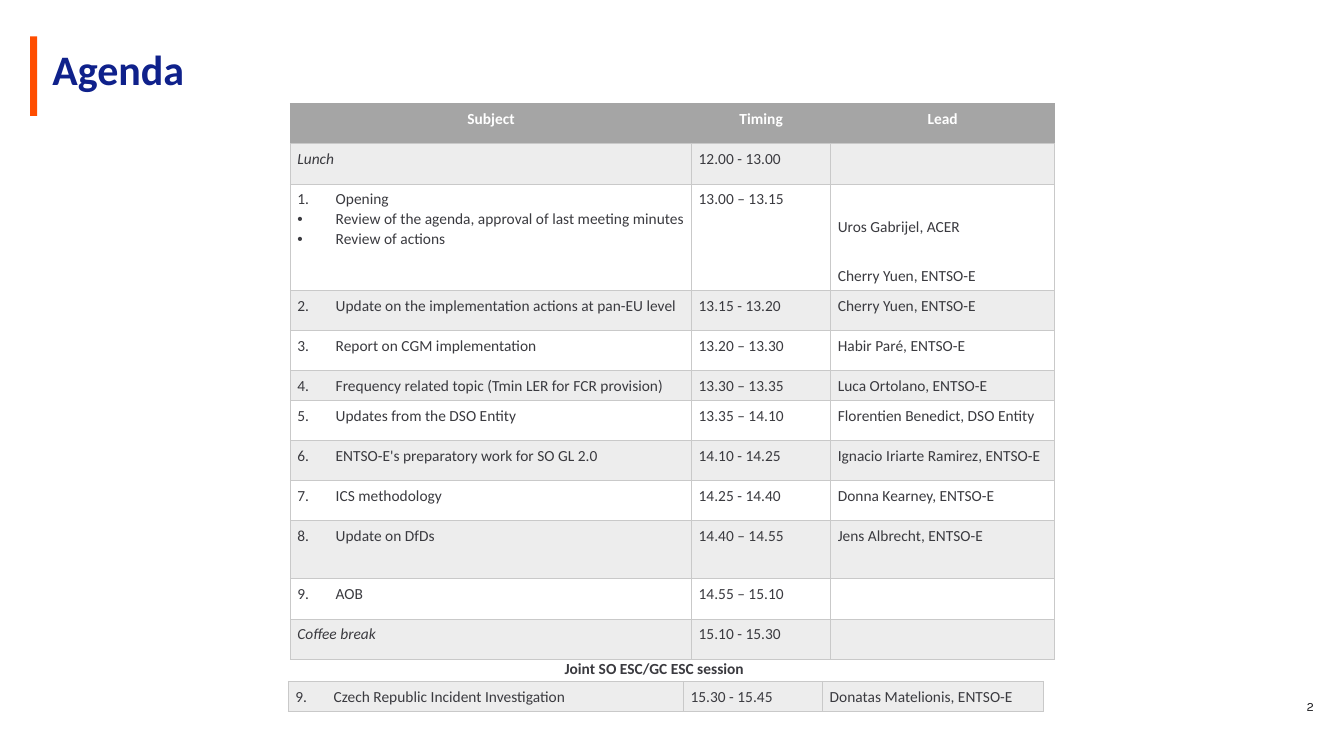
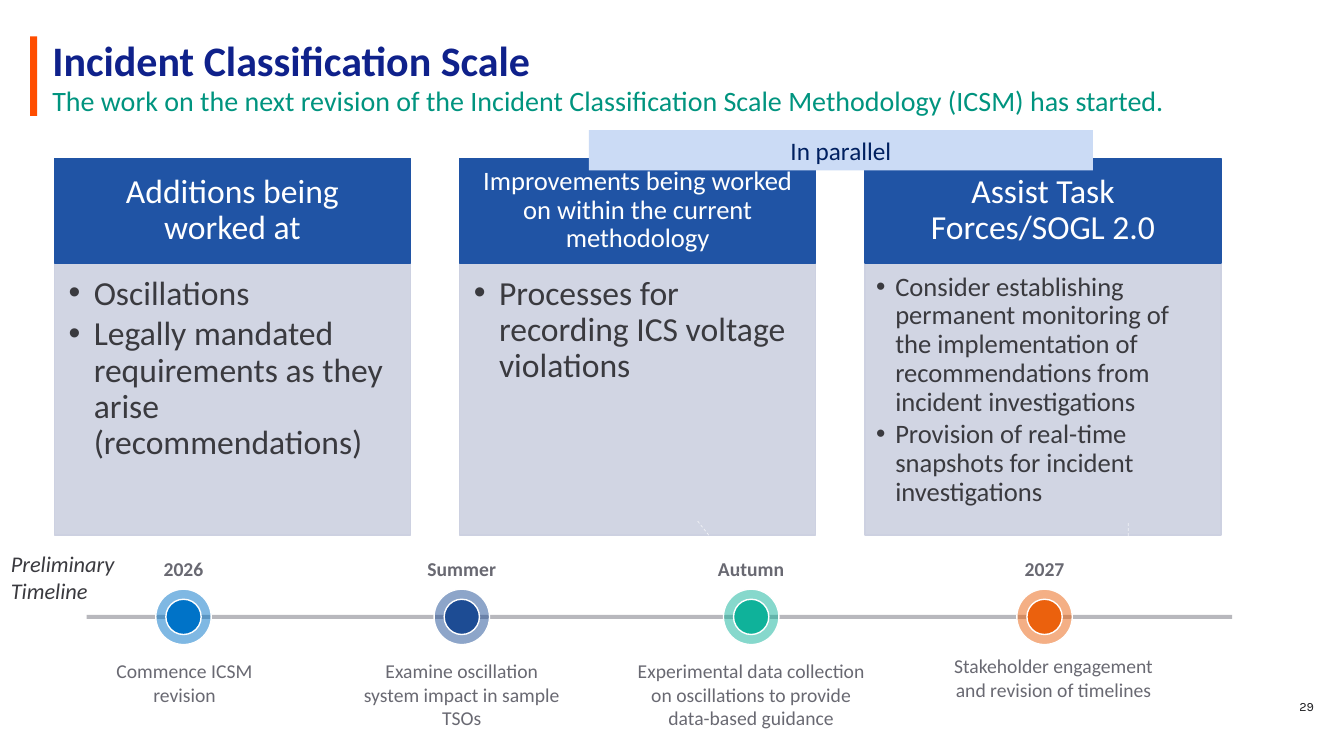
from lxml.etree import SubElement
from pptx import Presentation
from pptx.dml.color import RGBColor
from pptx.enum.dml import MSO_LINE
from pptx.enum.shapes import MSO_CONNECTOR, MSO_SHAPE
from pptx.enum.text import MSO_ANCHOR, MSO_AUTO_SIZE, PP_ALIGN
from pptx.oxml.ns import qn
from pptx.util import Inches, Pt

WIDE, HIGH = 13.33, 7.5
HUES = {
    "white": "FFFFFF", "navy": "0F218B", "orange": "FF4D00", "teal": "00947F",
    "text": "3A3A3F", "dark": "1D1D20", "gray": "696972", "head": "A5A5A5",
    "band": "EDEDED", "edge": "C9C9C9", "card": "2054A5", "pale": "CDD1E1",
    "axis": "9A9AA2", "tag": "CBDBF5", "ink": "002060",
    "blue": "0073C8", "deep": "1D4C94", "mint": "0FB29A", "rust": "EB610D",
}
ALIGN = {"l": PP_ALIGN.LEFT, "c": PP_ALIGN.CENTER, "r": PP_ALIGN.RIGHT}
ANCHOR = {"t": MSO_ANCHOR.TOP, "m": MSO_ANCHOR.MIDDLE}

HEADS = ["Subject", "Timing", "Lead"]
# Item number (0 for breaks), subject, timing, lead
AGENDA = [
    (0, ["Lunch"], "12.00 - 13.00", []),
    (1, ["Opening",
         "Review of the agenda, approval of last meeting minutes",
         "Review of actions"],
     "13.00 – 13.15", ["Uros Gabrijel, ACER", "Cherry Yuen, ENTSO-E"]),
    (2, ["Update on the implementation actions at pan-EU level"],
     "13.15 - 13.20", ["Cherry Yuen, ENTSO-E"]),
    (3, ["Report on CGM implementation"], "13.20 – 13.30", ["Habir Paré, ENTSO-E"]),
    (4, ["Frequency related topic (Tmin LER for FCR provision)"],
     "13.30 – 13.35", ["Luca Ortolano, ENTSO-E"]),
    (5, ["Updates from the DSO Entity"],
     "13.35 – 14.10", ["Florentien Benedict, DSO Entity"]),
    (6, ["ENTSO-E's preparatory work for SO GL 2.0"],
     "14.10 - 14.25", ["Ignacio Iriarte Ramirez, ENTSO-E"]),
    (7, ["ICS methodology"], "14.25 - 14.40", ["Donna Kearney, ENTSO-E"]),
    (8, ["Update on DfDs"], "14.40 – 14.55", ["Jens Albrecht, ENTSO-E"]),
    (9, ["AOB"], "14.55 – 15.10", []),
    (0, ["Coffee break"], "15.10 - 15.30", []),
]
JOINT = [(9, ["Czech Republic Incident Investigation"],
          "15.30 - 15.45", ["Donatas Matelionis, ENTSO-E"])]
SPECIAL = {2: 1.06, 5: 0.3, 9: 0.58}  # row heights that differ from the rest

# Heading, its size and insets, points, their size, indent and insets
CARDS = [
    ("Additions being worked at", 24, (0.19, 0.11, 0.19, 0.11),
     ["Oscillations",
      "Legally mandated requirements as they arise (recommendations)"],
     24, 0.25, (0.14, 0.14, 0.19, 0.21)),
    ("Improvements being worked on within the current methodology", 19,
     (0.15, 0.08, 0.15, 0.08),
     ["Processes for recording ICS voltage violations"],
     24, 0.25, (0.14, 0.14, 0.19, 0.21)),
    ("Assist Task Forces/SOGL 2.0", 24, (0.19, 0.11, 0.19, 0.11),
     ["Consider establishing permanent monitoring of the implementation of "
      "recommendations from incident investigations",
      "Provision of real-time snapshots for incident investigations"],
     19, 0.19, (0.11, 0.11, 0.15, 0.17)),
]
# Date, dot centre, colour, caption, caption centre, top and width
STEPS = [
    ("2026", 1.82, "blue", "Commence ICSM revision", 1.83, 6.49, 1.78),
    ("Summer", 4.58, "deep",
     "Examine oscillation system impact in sample TSOs", 4.58, 6.49, 2.15),
    ("Autumn", 7.45, "mint",
     "Experimental data collection on oscillations to provide data-based guidance",
     7.45, 6.49, 2.55),
    ("2027", 10.36, "rust",
     "Stakeholder engagement and revision of timelines", 10.45, 6.44, 2.18),
]
AXIS = 6.12
HINTS = [(6.92, 5.17, 7.45, 5.84), (11.19, 5.19, 11.19, 5.87)]


def rgb(hue):
    return RGBColor.from_string(HUES[hue])


def fade(props, alpha):
    """Set the opacity, in percent, of every colour below an element."""
    for tint in props.iter(qn("a:srgbClr")):
        SubElement(tint, qn("a:alpha"), val=str(alpha * 1000))


def mark(para, bullet, indent):
    """Hang a paragraph on a bullet: a number to count from, or a sign."""
    props = para._p.get_or_add_pPr()
    props.set("marL", str(Inches(indent)))
    props.set("indent", str(-Inches(indent)))
    if isinstance(bullet, int):
        SubElement(props, qn("a:buAutoNum"), type="arabicPeriod", startAt=str(bullet))
    else:
        SubElement(props, qn("a:buFont"), typeface="Arial")
        SubElement(props, qn("a:buChar"), char=bullet)


def write(frame, lines, size=11, hue="text", font="Calibri", bold=False,
          slant=False, align="l", lead=None, after=0, marks=(), indent=0.38,
          anchor=None, ins=None):
    """Fill a text frame with one paragraph per line; after goes between them."""
    frame.word_wrap = True
    if anchor:
        frame.vertical_anchor = ANCHOR[anchor]
    if ins:
        (frame.margin_left, frame.margin_top,
         frame.margin_right, frame.margin_bottom) = map(Inches, ins)
    for i, line in enumerate(lines or [""]):
        para = frame.add_paragraph() if i else frame.paragraphs[0]
        if i < len(marks):
            mark(para, marks[i], indent)
        para.alignment = ALIGN[align]
        if lead:
            para.line_spacing = lead
        if i < len(lines) - 1:
            para.space_after = Pt(after)
        if line:
            run = para.add_run()
            run.text = line
            face = run.font
            face.name, face.size = font, Pt(size)
            face.bold, face.italic = bold, slant
            face.color.rgb = rgb(hue)


def label(slide, box, lines, **fmt):
    write(slide.shapes.add_textbox(*map(Inches, box)).text_frame, lines, **fmt)


def block(slide, box, fill, line=None, alpha=None, kind=MSO_SHAPE.RECTANGLE):
    shape = slide.shapes.add_shape(kind, *map(Inches, box))
    shape.shadow.inherit = False
    shape.fill.solid()
    shape.fill.fore_color.rgb = rgb(fill)
    if alpha:
        fade(shape._element.spPr, alpha)
    if line:
        shape.line.color.rgb = rgb(line)
        shape.line.width = Pt(1)
    else:
        shape.line.fill.background()
    return shape


def stroke(slide, ends, hue, width, dash=None):
    wire = slide.shapes.add_connector(MSO_CONNECTOR.STRAIGHT, *map(Inches, ends))
    wire.line.color.rgb = rgb(hue)
    wire.line.width = Pt(width)
    if dash:
        wire.line.dash_style = dash
    fade(wire._element.spPr, 70)
    SubElement(wire._element.spPr, qn("a:effectLst"))


def start(deck, title, top, number):
    """Add a slide with the shared title style, side bar and page number."""
    slide = deck.slides.add_slide(deck.slide_layouts[5])
    head = slide.shapes.title
    head.left, head.top, head.width, head.height = map(
        Inches, (0.42, top, 12.71, 0.39))
    head.text_frame.auto_size = MSO_AUTO_SIZE.NONE
    write(head.text_frame, [title], size=30, hue="navy", bold=True,
          lead=Pt(32), anchor="m")
    block(slide, (0.3, 0.36, 0.07, 0.79), "orange")
    label(slide, (6.75, 6.82, 6.38, 0.4), [number], size=9, hue="dark",
          font="Karla", align="r", lead=Pt(9), anchor="m")
    return slide


def frame_cell(cell, hues):
    props = cell._tc.get_or_add_tcPr()
    for i, (side, hue) in enumerate(zip(("lnL", "lnR", "lnT", "lnB"), hues)):
        line = SubElement(props, qn("a:" + side), w=str(Pt(0.75)))
        fill = SubElement(line, qn("a:solidFill"))
        SubElement(fill, qn("a:srgbClr"), val=HUES[hue])
        props.remove(line)
        props.insert(i, line)


def style(cell, fill, hues=("edge",) * 4, drop=0.05):
    cell.margin_left = cell.margin_right = Inches(0.07)
    cell.margin_top, cell.margin_bottom = Inches(drop), Inches(0.05)
    if fill:
        cell.fill.solid()
        cell.fill.fore_color.rgb = rgb(fill)
    else:
        cell.fill.background()
    frame_cell(cell, hues)


def grid(slide, left, top, cols, rows, items, heads=()):
    """Draw agenda items as a banded table, under a header row if given."""
    shape = slide.shapes.add_table(len(rows), len(cols), *map(
        Inches, (left, top, sum(cols), sum(rows))))
    table = shape.table
    table.first_row, table.horz_banding = bool(heads), False
    for col, width in zip(table.columns, cols):
        col.width = Inches(width)
    for row, height in zip(table.rows, rows):
        row.height = Inches(height)
    lead = Pt(14.2)
    for c, name in enumerate(heads):
        cell = table.cell(0, c)
        style(cell, "head", ("head", "head", "head", "edge"))
        write(cell.text_frame, [name], hue="white", bold=True, align="c", lead=lead)
    for i, (num, topic, time, who) in enumerate(items):
        cells = table.rows[i + bool(heads)].cells
        fill = None if i % 2 else "band"
        marks = [num] + ["•"] * (len(topic) - 1) if num else ()
        for cell, lines in zip(cells, (topic, [time], who)):
            style(cell, fill, drop=0.33 if lines is who and len(who) > 1 else 0.05)
            first = lines is topic
            write(cell.text_frame, lines, lead=lead, slant=first and not num,
                  marks=marks if first else (), after=0 if first else 20.2)


def agenda(deck):
    slide = start(deck, "Agenda", 0.51, "2")
    count = len(AGENDA) + 1
    plain = (5.5 - sum(SPECIAL.values())) / (count - len(SPECIAL))
    rows = [SPECIAL.get(r, plain) for r in range(count)]
    grid(slide, 2.86, 6.76, (3.92, 1.38, 2.19), [0.3], JOINT)
    label(slide, (3.18, 6.46, 6.62, 0.3), ["Joint SO ESC/GC ESC session"],
          bold=True, align="c", lead=Pt(15.4))
    grid(slide, 2.88, 1.03, (3.98, 1.38, 2.22), rows, AGENDA, HEADS)


def scale(deck):
    slide = start(deck, "Incident Classification Scale", 0.43, "29")
    label(slide, (0.42, 0.74, 12.71, 0.48),
          ["The work on the next revision of the Incident Classification Scale "
           "Methodology (ICSM) has started."],
          size=20, hue="teal", lead=Pt(26), anchor="m")

    for i, (head, size, pad, points, small, indent, inner) in enumerate(CARDS):
        left = 0.54 + i * 4.02
        body = block(slide, (left, 2.6, 3.53, 2.71), "pale", "pale", 90)
        write(body.text_frame, points, size=small, lead=0.9, after=3,
              marks="•" * len(points), indent=indent, anchor="t", ins=inner)
        top = block(slide, (left, 1.57, 3.53, 1.04), "card", "card")
        write(top.text_frame, [head], size=size, hue="white", align="c",
              lead=0.9, anchor="m", ins=pad)

    stroke(slide, (0.86, AXIS, 12.22, AXIS), "axis", 3)
    for date, mid, hue, note, center, top, width in STEPS:
        for size, alpha in ((0.55, 50), (0.35, None)):
            block(slide, (mid - size / 2, AXIS - size / 2, size, size),
                  hue, "white", alpha, MSO_SHAPE.OVAL)
        label(slide, (mid - 0.89, 5.48, 1.78, 0.34), [date],
              size=14, hue="gray", bold=True, align="c")
        label(slide, (center - width / 2, top, width, 0.81), [note],
              size=14, hue="gray", align="c")
    for ends in HINTS:
        stroke(slide, ends, "white", 0.5, MSO_LINE.DASH)

    tag = block(slide, (5.84, 1.29, 5, 0.4), "tag")
    write(tag.text_frame, ["In parallel"], size=18, hue="ink", align="c", anchor="m")
    label(slide, (0.01, 5.41, 1.54, 0.64), ["Preliminary", "Timeline"],
          size=16, slant=True)


def main():
    deck = Presentation()
    deck.slide_width, deck.slide_height = Inches(WIDE), Inches(HIGH)
    agenda(deck)
    scale(deck)
    deck.save("out.pptx")


if __name__ == "__main__":
    main()
